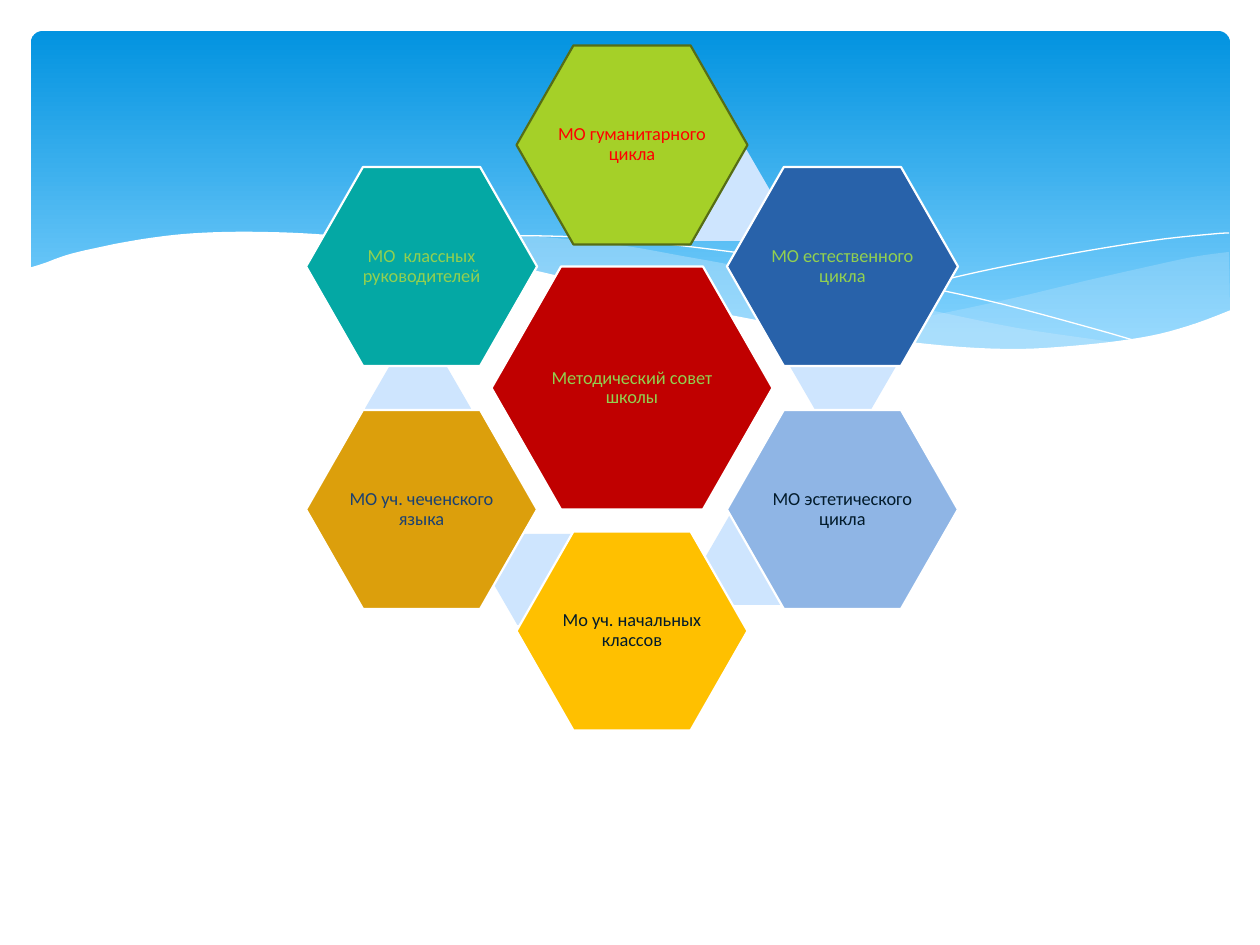
from math import cos, radians, sin

from lxml.etree import SubElement
from pptx import Presentation
from pptx.dml.color import RGBColor
from pptx.enum.shapes import MSO_SHAPE as Kind
from pptx.enum.text import MSO_ANCHOR as Anchor, PP_ALIGN as Align
from pptx.oxml.ns import qn
from pptx.util import Pt

WHITE = RGBColor(0xFF, 0xFF, 0xFF)
SKY = RGBColor(0x02, 0x93, 0xE0)
PALE_SKY = RGBColor(0x83, 0xD3, 0xFE)
MIST = RGBColor(0xC6, 0xE7, 0xFC)
LINK = RGBColor(0xCE, 0xE5, 0xFE)
CRIMSON = RGBColor(0xC0, 0x00, 0x00)
LIME = RGBColor(0xA5, 0xD0, 0x28)
OLIVE = RGBColor(0x56, 0x6D, 0x15)
BLUE = RGBColor(0x28, 0x62, 0xAA)
LIGHT_BLUE = RGBColor(0x8F, 0xB5, 0xE5)
AMBER = RGBColor(0xFF, 0xC0, 0x00)
GOLD = RGBColor(0xDC, 0x9F, 0x0C)
TEAL = RGBColor(0x04, 0xA8, 0xA4)
GREEN = RGBColor(0x92, 0xD0, 0x50)
RED = RGBColor(0xFF, 0x00, 0x00)
INK = RGBColor(0x02, 0x1B, 0x2B)
NAVY = RGBColor(0x1B, 0x41, 0x71)

HUB = "Методический совет школы"
PETALS = [
    ("МО гуманитарного цикла", LIME, RED, OLIVE, (667, 150)),
    ("МО естественного цикла", BLUE, GREEN, WHITE, (790, 321)),
    ("МО эстетического цикла", LIGHT_BLUE, INK, WHITE, (704, 514)),
    ("Мо уч. начальных классов", AMBER, INK, WHITE, (491, 534)),
    ("МО уч. чеченского языка", GOLD, NAVY, WHITE, (365, 363)),
    ("МО  классных руководителей", TEAL, GREEN, WHITE, None),
]

RIGHT = [
    [(1229, 252), (1193, 257), (1142, 268), (1085, 281), (1014, 298),
     (949, 312), (889, 324), (833, 334)],
    [(833, 334), (888, 341), (939, 346), (984, 349), (1026, 350), (1064, 349),
     (1099, 345), (1130, 340), (1161, 334), (1187, 326), (1213, 318), (1230, 311)],
]
MIDDLE = [
    [(1125, 344), (1091, 339), (1017, 328), (934, 311), (842, 291), (793, 280),
     (736, 266), (682, 256), (632, 247), (586, 241), (529, 236), (479, 233),
     (433, 234), (394, 237), (360, 241)],
    [(360, 241), (407, 247), (456, 256), (509, 266), (566, 280), (619, 292),
     (713, 312), (779, 325), (838, 335), (893, 343), (943, 348), (988, 350),
     (1030, 350), (1068, 349), (1104, 347), (1125, 344)],
]
FRONT = [
    [(1231, 310), (1197, 323), (1159, 334), (1118, 341), (1071, 346), (1019, 349),
     (961, 347), (892, 340), (816, 330), (730, 315), (634, 294), (563, 277),
     (492, 261), (428, 248), (368, 239), (315, 234), (266, 232), (223, 232),
     (184, 234), (150, 238), (120, 243), (96, 248), (74, 253), (58, 258),
     (45, 263), (29, 268)],
    [(29, 415), (1231, 415)],
]
FALLING = [[(389, 246), (413, 242), (445, 239), (488, 236), (546, 236), (616, 239),
            (701, 248), (801, 262), (916, 285), (1002, 304), (1095, 329), (1143, 343)]]
RISING = [[(772, 324), (847, 304), (907, 289), (978, 272), (1053, 257),
           (1110, 247), (1164, 239), (1213, 234), (1229, 233)]]
WAVES = [(RIGHT, MIST, 29), (MIDDLE, MIST, 40), (FALLING, None, 0),
         (RISING, None, 0), (FRONT, WHITE, 100)]

CENTER = (632, 388)
RADIUS = 243
HUB_SIZE = (281, 243)
PETAL_SIZE = (231, 199)
LINK_SIZE = (106, 91)


def px(n):
    return round(n * 914400 / 126)


def bend(pts, steps=4):
    if len(pts) < 3:
        return pts
    ends = [pts[0], *pts, pts[-1]]
    out = [pts[0]]
    for a, b, c, d in zip(ends, ends[1:], ends[2:], ends[3:]):
        for i in range(1, steps + 1):
            t = i / steps
            out.append(tuple(
                (2 * q + (r - p) * t + (2 * p - 5 * q + 4 * r - s) * t ** 2
                 + (3 * q - p - 3 * r + s) * t ** 3) / 2
                for p, q, r, s in zip(a, b, c, d)))
    return out


def paint(shape, fill, edge=None, width=1.25):
    shape.shadow.inherit = False
    if fill is None:
        shape.fill.background()
    else:
        shape.fill.solid()
        shape.fill.fore_color.rgb = fill
    if edge is None:
        shape.line.fill.background()
    else:
        shape.line.color.rgb = edge
        shape.line.width = Pt(width)


def wave(shapes, curves, fill, alpha):
    pts = [(px(x), px(y)) for curve in curves for x, y in bend(curve)]
    pen = shapes.build_freeform(*pts[0], scale=1.0)
    pen.add_line_segments(pts[1:], close=fill is not None)
    shape = pen.convert_to_shape()
    paint(shape, fill, WHITE if fill is None else None, 0)
    if 0 < alpha < 100:
        tint = next(shape.element.iter(qn("a:srgbClr")))
        SubElement(tint, qn("a:alpha")).set("val", str(alpha * 1000))


def hexagon(shapes, spot, size, fill, edge=None):
    shape = shapes.add_shape(Kind.HEXAGON, *map(px, (*spot, *size)))
    shape.adjustments[0] = 0.286 if edge else 0.289
    paint(shape, fill, edge)
    return shape


def write(shape, text, color, size=10.5, font="Calibri", inset=1):
    frame = shape.text_frame
    frame.word_wrap = True
    frame.vertical_anchor = Anchor.MIDDLE
    frame.margin_left = frame.margin_right = px(inset)
    frame.margin_top = frame.margin_bottom = px(inset)
    para = frame.paragraphs[0]
    para.alignment = Align.CENTER
    para.line_spacing = 0.9
    run = para.add_run()
    run.text = text
    run.font.name = font
    run.font.size = Pt(size)
    run.font.color.rgb = color


def around(mid, size):
    return tuple(m - s / 2 for m, s in zip(mid, size))


def main():
    deck = Presentation()
    deck.slide_width, deck.slide_height = px(1260), px(945)
    shapes = deck.slides.add_slide(deck.slide_layouts[6]).shapes

    sky = shapes.add_shape(Kind.ROUNDED_RECTANGLE, *map(px, (31, 31, 1199, 340)))
    sky.adjustments[0] = 0.034
    paint(sky, SKY)
    sky.fill.gradient()
    sky.fill.gradient_angle = 270
    for stop, color, place in zip(sky.fill.gradient_stops, (SKY, PALE_SKY), (0, 0.9)):
        stop.color.rgb = color
        stop.position = place

    for curves, fill, alpha in WAVES:
        wave(shapes, curves, fill, alpha)

    hub = hexagon(shapes, around(CENTER, HUB_SIZE), HUB_SIZE, CRIMSON, WHITE)
    write(hub, HUB, GREEN)
    for i, (text, fill, ink, edge, link) in enumerate(PETALS):
        if link:
            hexagon(shapes, link, LINK_SIZE, LINK)
        turn = radians(60 * i)
        mid = (CENTER[0] + RADIUS * sin(turn), CENTER[1] - RADIUS * cos(turn))
        petal = hexagon(shapes, around(mid, PETAL_SIZE), PETAL_SIZE, fill, edge)
        write(petal, text, ink)

    deck.save("out.pptx")


if __name__ == "__main__":
    main()
